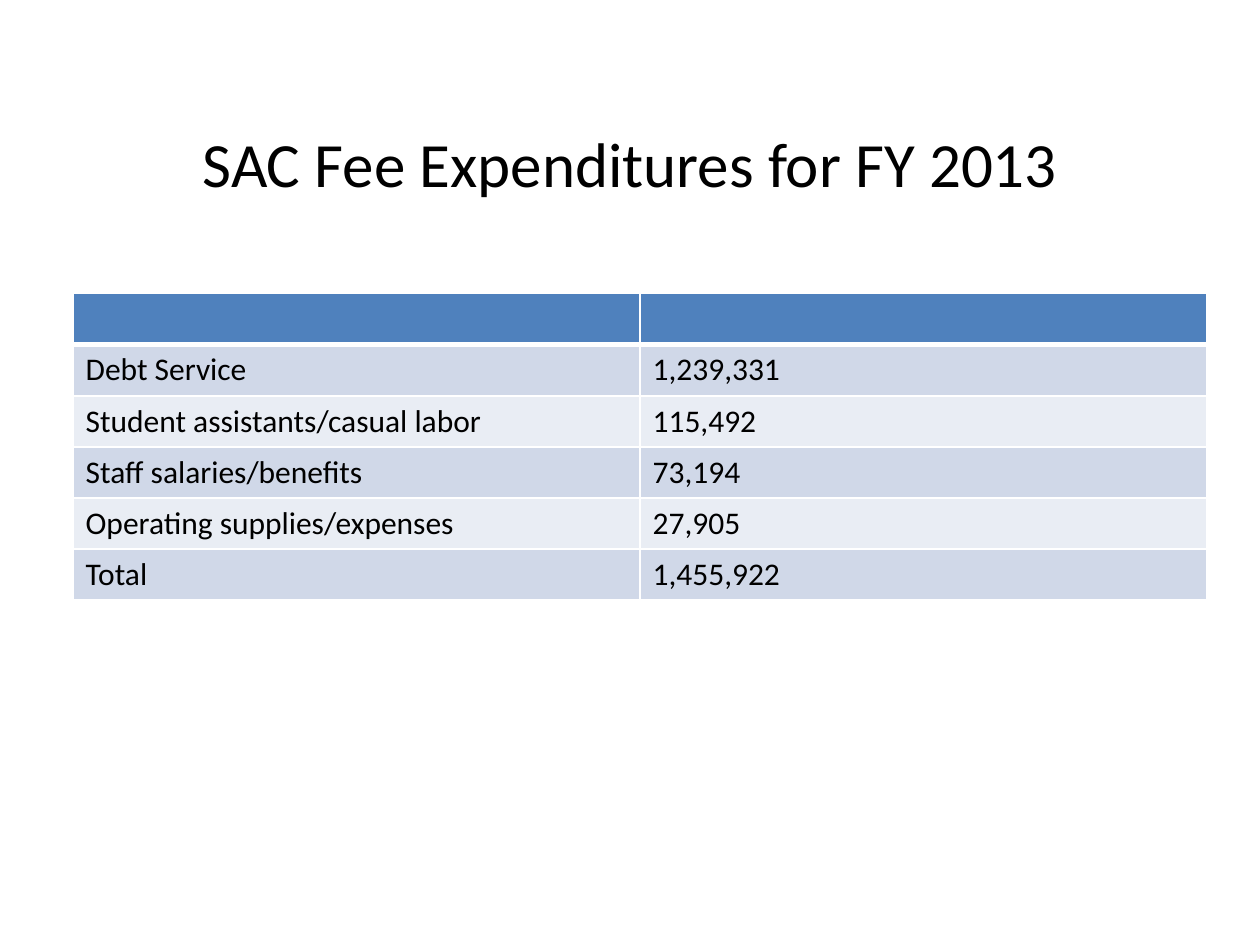
from dataclasses import dataclass

from lxml import etree
from pptx import Presentation
from pptx import util as u
from pptx.dml.color import RGBColor
from pptx.enum import text
from pptx.oxml import ns


@dataclass(frozen=True)
class Theme:
    font: str = "Calibri"
    ink: str = "000000"
    header: str = "4F81BD"
    bands: tuple = ("D0D8E8", "E9EDF4")
    rule: str = "FFFFFF"
    title_size: int = 36
    body_size: int = 18
    thin: int = 1
    thick: int = 3


THEME = Theme()
TITLE = "SAC Fee Expenditures for FY 2013"
EXPENDITURES = [
    ("Debt Service", "1,239,331"),
    ("Student assistants/casual labor", "115,492"),
    ("Staff salaries/benefits", "73,194"),
    ("Operating supplies/expenses", "27,905"),
    ("Total", "1,455,922"),
]


def add_run(p, words, size):
    r = p.add_run()
    r.text = words
    r.font.name = THEME.font
    r.font.size = u.Pt(size)
    r.font.color.rgb = RGBColor.from_string(THEME.ink)


def set_borders(cell, **widths):
    tc_pr = cell._tc.get_or_add_tcPr()
    for side in ("L", "R", "T", "B"):
        width = u.Pt(widths.get(side, THEME.thin))
        ln = etree.SubElement(tc_pr, ns.qn(f"a:ln{side}"), w=str(width))
        fill = etree.SubElement(ln, ns.qn("a:solidFill"))
        etree.SubElement(fill, ns.qn("a:srgbClr"), val=THEME.rule)


def set_fill(cell, colour):
    cell.fill.solid()
    cell.fill.fore_color.rgb = RGBColor.from_string(colour)


def place_title(s, left, top, width, height):
    sp = s.shapes.title
    sp.left, sp.top, sp.width, sp.height = left, top, width, height
    tf = sp.text_frame
    tf.word_wrap = True
    tf.auto_size = text.MSO_AUTO_SIZE.NONE
    tf.vertical_anchor = text.MSO_ANCHOR.BOTTOM
    tf.margin_bottom = 0
    p = tf.paragraphs[0]
    p.alignment = text.PP_ALIGN.CENTER
    add_run(p, TITLE, THEME.title_size)


def place_table(s, left, top, width, height):
    rows = len(EXPENDITURES) + 1
    table = s.shapes.add_table(rows, 2, left, top, width, height).table
    for cell in table.rows[0].cells:
        set_borders(cell, B=THEME.thick)
        set_fill(cell, THEME.header)
    for i, entry in enumerate(EXPENDITURES):
        top_rule = THEME.thick if i == 0 else THEME.thin
        for cell, words in zip(table.rows[i + 1].cells, entry):
            set_borders(cell, T=top_rule)
            set_fill(cell, THEME.bands[i % 2])
            add_run(cell.text_frame.paragraphs[0], words, THEME.body_size)


def main():
    prs = Presentation()
    prs.slide_width, prs.slide_height = u.Inches(10), u.Inches(7.5)
    s = prs.slides.add_slide(prs.slide_layouts.get_by_name("Title Only"))
    place_title(s, u.Inches(0.5), u.Inches(0.3), u.Inches(9), u.Inches(1.29))
    place_table(s, u.Inches(0.58), u.Inches(2.33), u.Inches(9), u.Inches(2.43))
    prs.save("out.pptx")


if __name__ == "__main__":
    main()
